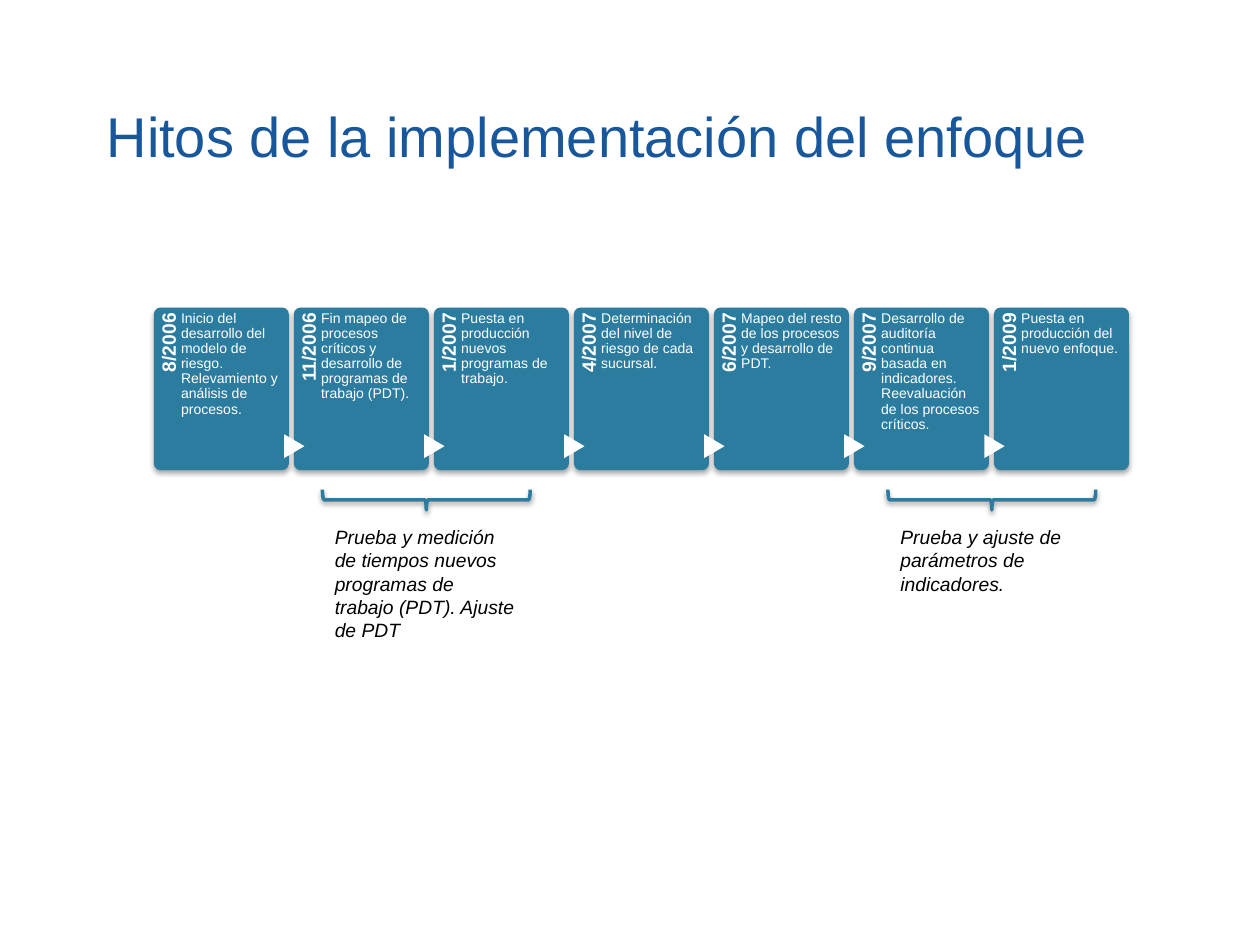
from lxml import etree
from pptx import Presentation
from pptx.dml.color import RGBColor as Rgb
from pptx.enum.shapes import MSO_SHAPE as Kind
from pptx.enum.text import MSO_ANCHOR as Anchor, PP_ALIGN as Align
from pptx.oxml.ns import qn
from pptx.util import Cm, Pt

COLORS = {"title": "18579B", "teal": "2C7C9F", "white": "FFFFFF", "black": "000000"}
FONT = "Arial"

STEPS = [
    ("8/2006", "Inicio del desarrollo del modelo de riesgo. "
               "Relevamiento y análisis de procesos."),
    ("11/2006", "Fin mapeo de procesos críticos y desarrollo de programas de trabajo (PDT)."),
    ("1/2007", "Puesta en producción nuevos programas de trabajo."),
    ("4/2007", "Determinación del nivel de riesgo de cada sucursal."),
    ("6/2007", "Mapeo del resto de los procesos y desarrollo de PDT."),
    ("9/2007", "Desarrollo de auditoría continua basada en indicadores. "
               "Reevaluación de los procesos críticos."),
    ("1/2009", "Puesta en producción del nuevo enfoque."),
]
NOTES = [
    (6.5, 2.62, "Prueba y medición de tiempos nuevos programas de trabajo (PDT). Ajuste de PDT"),
    (17.9, 1.68, "Prueba y ajuste de parámetros de indicadores."),
]


def color(name):
    return Rgb.from_string(COLORS[name])


def add_shadow(shape, dist, alpha):
    """Give the shape a soft shadow straight below it."""
    shape.shadow.inherit = False
    effects = shape._element.spPr.find(qn("a:effectLst"))
    outer = etree.SubElement(effects, qn("a:outerShdw"), blurRad=str(Pt(3.1)),
                             dist=str(Pt(dist)), dir="5400000", rotWithShape="0")
    tint = etree.SubElement(outer, qn("a:srgbClr"), val=COLORS["black"])
    etree.SubElement(tint, qn("a:alpha"), val=str(alpha * 1000))


def add_shape(slide, kind, x, y, w, h, fill):
    shape = slide.shapes.add_shape(kind, Cm(x), Cm(y), Cm(w), Cm(h))
    shape.shadow.inherit = False
    shape.line.fill.background()
    shape.fill.solid()
    shape.fill.fore_color.rgb = color(fill)
    return shape


def add_text(slide, x, y, w, h, text, size, tone, pads=None, bold=False,
             italic=False, align=Align.LEFT, space=1.0):
    """Pads are the left, top, right and bottom insets in cm."""
    box = slide.shapes.add_textbox(Cm(x), Cm(y), Cm(w), Cm(h))
    frame = box.text_frame
    frame.word_wrap = True
    if pads:
        (frame.margin_left, frame.margin_top,
         frame.margin_right, frame.margin_bottom) = [Cm(pad) for pad in pads]
    para = frame.paragraphs[0]
    para.alignment = align
    para.line_spacing = space
    run = para.add_run()
    run.text = text
    font = run.font
    font.name, font.size, font.bold, font.italic = FONT, Pt(size), bold, italic
    font.color.rgb = color(tone)
    return box


def add_title(slide, x, y, w, h):
    box = add_text(slide, x, y, w, h, "Hitos de la implementación del enfoque", 32, "title")
    box.text_frame.vertical_anchor = Anchor.MIDDLE


def add_card(slide, x, y, w, h, date, text, linked):
    """A linked card has an arrow coming in from the card before."""
    card = add_shape(slide, Kind.ROUNDED_RECTANGLE, x, y, w, h, "teal")
    card.adjustments[0] = 0.05
    add_shadow(card, 1.8, 35)
    label = add_text(slide, x - 1.07, y + 1.07, 2.69, 0.53, date, 11, "white",
                     (0, 0.1, 0.12, 0), bold=True, align=Align.RIGHT, space=0.9)
    label.rotation = 270
    if linked:
        arrow = add_shape(slide, Kind.FLOWCHART_EXTRACT, x - 0.23, y + 2.59,
                          0.48, 0.41, "white")
        arrow.rotation = 90
    add_text(slide, x + 0.55, y, w - 0.69, h, text, 8, "white",
             (0, 0.08, 0, 0), space=0.9)


def add_timeline(slide, x, y, w, h, gap):
    card_w = (w - gap * (len(STEPS) - 1)) / len(STEPS)
    for i, (date, text) in enumerate(STEPS):
        add_card(slide, x + i * (card_w + gap), y, card_w, h, date, text, i > 0)


def add_note(slide, x, y, w, h, text):
    """Draw a brace that points down at its note."""
    thick = 0.41
    brace = add_shape(slide, Kind.LEFT_BRACE, x + (w - thick) / 2,
                      y + (thick - w) / 2, thick, w, "white")
    brace.rotation = 270
    brace.fill.background()
    brace.line.color.rgb = color("teal")
    brace.line.width = Pt(2)
    add_shadow(brace, 1.6, 38)
    add_text(slide, x, y + 0.6, w, h, text, 11, "black", italic=True)


def main():
    deck = Presentation()
    deck.slide_width, deck.slide_height = Cm(25.4), Cm(19.05)
    slide = deck.slides.add_slide(deck.slide_layouts[6])
    back = slide.background.fill
    back.solid()
    back.fore_color.rgb = color("white")
    add_title(slide, 1.9, 1.7, 21.6, 2.03)
    add_timeline(slide, 3.1, 6.2, 19.66, 3.28, 0.1)
    for x, h, text in NOTES:
        add_note(slide, x, 9.87, 4.19, h, text)
    deck.save("out.pptx")


if __name__ == "__main__":
    main()
